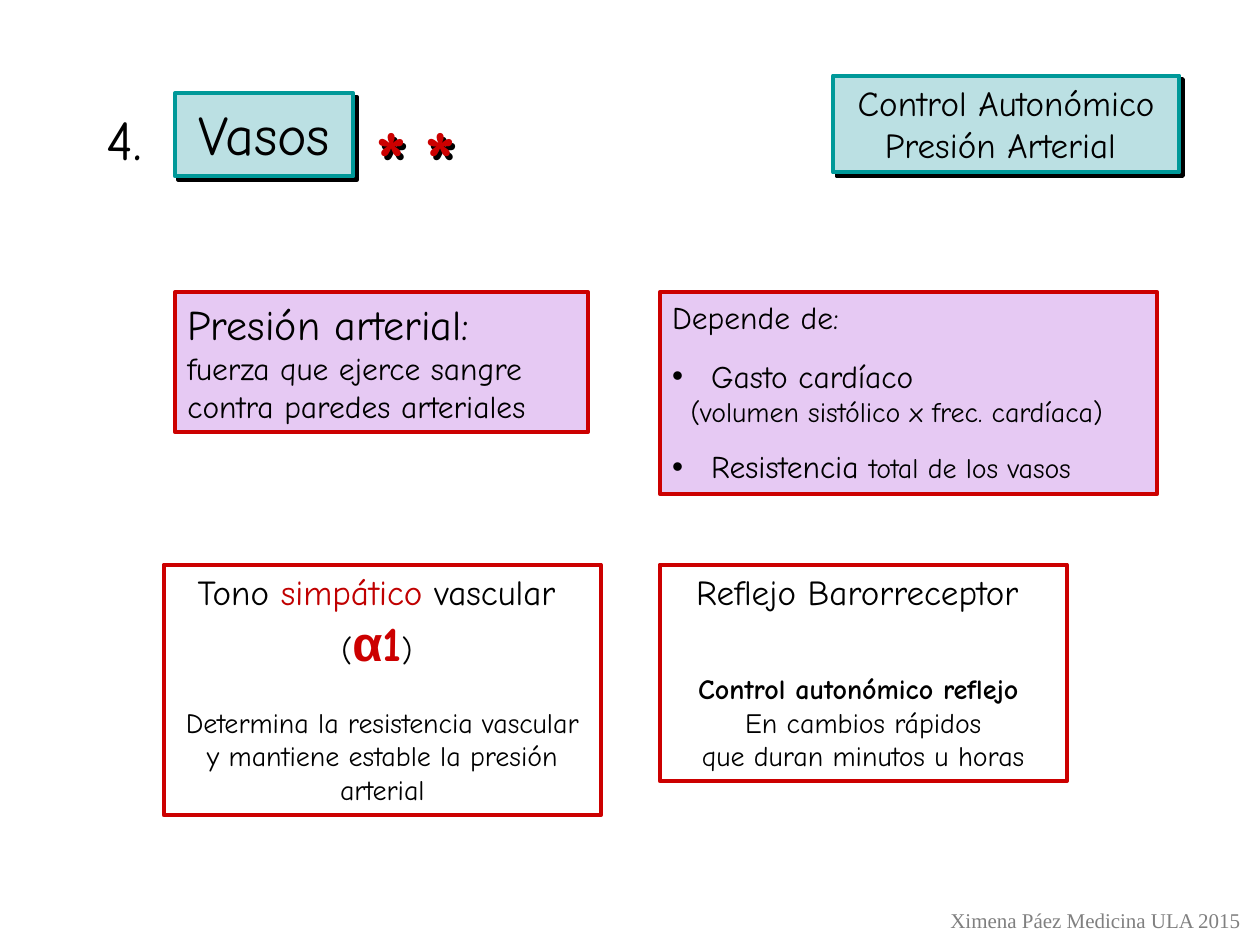
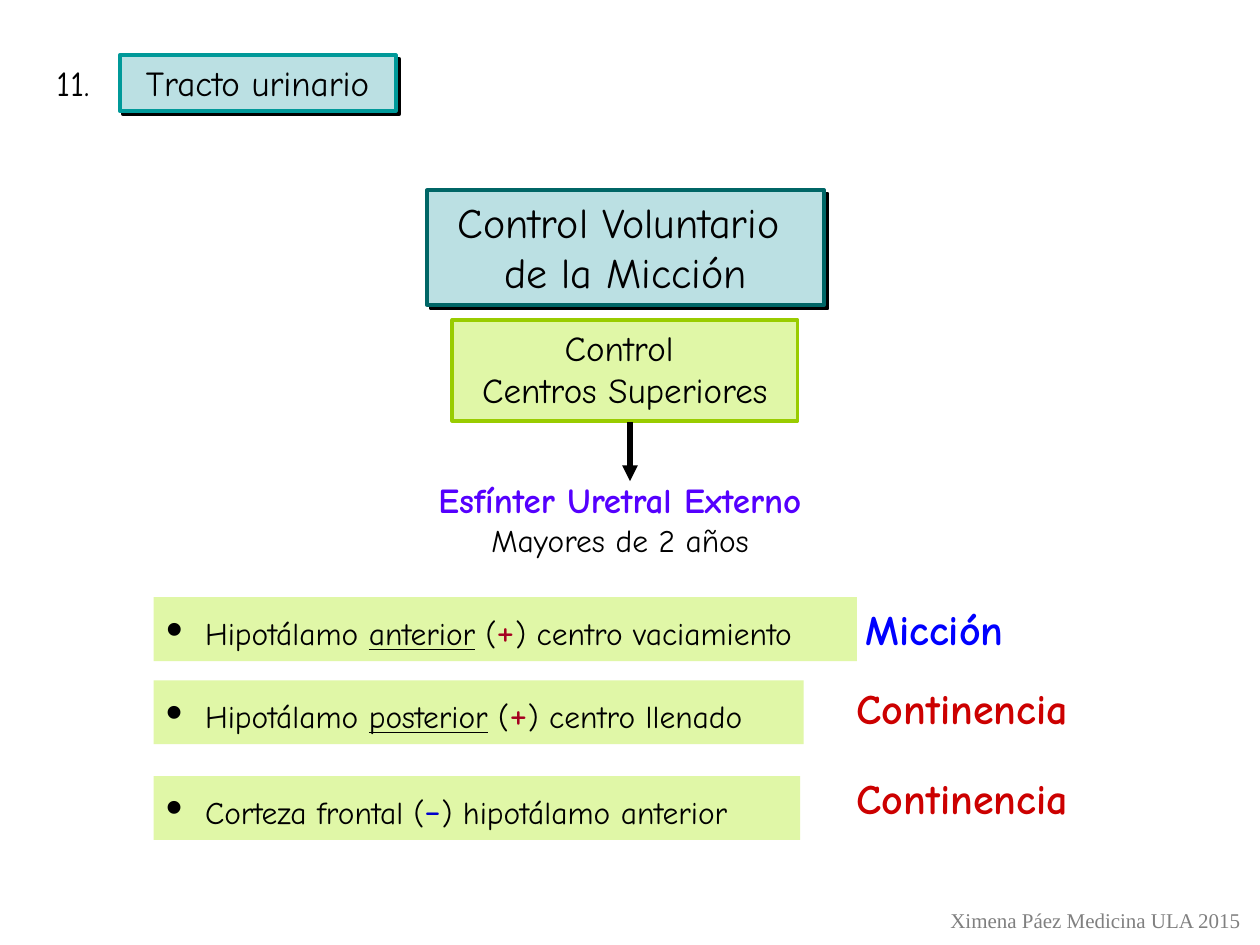
from dataclasses import dataclass
from typing import Optional

import pptx
import pptx.dml.color
import pptx.enum.shapes
import pptx.enum.text
import pptx.oxml
import pptx.oxml.ns
import pptx.util

Pt = pptx.util.Pt
ALIGN = pptx.enum.text.PP_ALIGN


@dataclass(frozen=True)
class Theme:
    font: str = "Comic Neue"
    footer_font: str = "Times New Roman"
    symbol_font: str = "Arial"
    black: str = "000000"
    grey: str = "808080"
    red: str = "CC0000"
    dark_red: str = "C00000"
    plus_red: str = "A50021"
    blue: str = "0000FF"
    minus_blue: str = "0000CC"
    violet: str = "5500FE"
    teal: str = "009999"
    dark_teal: str = "006666"
    pale_teal: str = "BBE0E3"
    lilac: str = "E6C9F3"
    lime: str = "99CC00"
    pale_lime: str = "E0F7A7"
    star: float = 48
    title: float = 32
    symbol: float = 28
    large: float = 24
    heading: float = 20
    body: float = 18
    small: float = 16
    footer: float = 12
    outline: float = 2.25
    bullet_indent: float = 22.3


THEME = Theme()


@dataclass
class Run:
    text: str
    size: float = THEME.body
    colour: str = THEME.black
    bold: bool = False
    underline: bool = False
    font: str = THEME.font


@dataclass
class Line:
    """One paragraph; bullet is the bullet size in percent."""
    runs: list
    centred: bool = False
    before: float = 0
    margin: float = 0
    bullet: Optional[int] = None


def centred(*runs, before=0):
    return Line(list(runs), centred=True, before=before)


def left(*runs, **options):
    return Line(list(runs), **options)


def rgb(colour):
    return pptx.dml.color.RGBColor.from_string(colour)


def add_xml(parent, tag, **attributes):
    element = pptx.oxml.parse_xml(f'<{tag} {pptx.oxml.ns.nsdecls("a")}/>')
    for name, value in attributes.items():
        element.set(name, str(value))
    parent.append(element)
    return element


class Deck:
    def __init__(self, theme):
        self.theme = theme
        self.presentation = pptx.Presentation()
        self.presentation.slide_width = Pt(720)
        self.presentation.slide_height = Pt(540)
        self.slide = None

    def new_slide(self):
        self.slide = self.presentation.slides.add_slide(self.presentation.slide_layouts[6])
        footer = Run("Ximena Páez Medicina ULA 2015", self.theme.footer,
                     self.theme.grey, font=self.theme.footer_font)
        self.text((535, 514.8, 182, 21.6), [centred(footer)])

    def panel(self, box, lines, fill=None, outline=None, shadow=False, wrap=False):
        shape = self.slide.shapes.add_shape(
            pptx.enum.shapes.MSO_SHAPE.RECTANGLE, *map(Pt, box))
        shape.shadow.inherit = False
        if fill:
            shape.fill.solid()
            shape.fill.fore_color.rgb = rgb(fill)
        else:
            shape.fill.background()
        if outline:
            shape.line.color.rgb = rgb(outline)
            shape.line.width = Pt(self.theme.outline)
        else:
            shape.line.fill.background()
        if shadow:
            self.drop_shadow(shape)
        self.add_lines(shape, lines, wrap)

    def title_panel(self, box, lines, outline=None):
        self.panel(box, lines, self.theme.pale_teal, outline or self.theme.teal, shadow=True)

    def text(self, box, lines, wrap=False, shadow=False):
        shape = self.slide.shapes.add_textbox(*map(Pt, box))
        if shadow:
            shape.shadow.inherit = False
            self.drop_shadow(shape)
        self.add_lines(shape, lines, wrap)

    def drop_shadow(self, shape):
        effects = shape._element.spPr.find(pptx.oxml.ns.qn("a:effectLst"))
        outer = add_xml(effects, "a:outerShdw", dist=Pt(2.8), dir=45 * 60000,
                        algn="ctr", rotWithShape=0)
        add_xml(outer, "a:srgbClr", val=self.theme.black)

    def add_lines(self, shape, lines, wrap):
        frame = shape.text_frame
        frame.word_wrap = wrap
        frame.auto_size = pptx.enum.text.MSO_AUTO_SIZE.SHAPE_TO_FIT_TEXT
        frame.vertical_anchor = pptx.enum.text.MSO_ANCHOR.TOP
        for index, line in enumerate(lines):
            paragraph = frame.add_paragraph() if index else frame.paragraphs[0]
            paragraph.alignment = ALIGN.CENTER if line.centred else ALIGN.LEFT
            if line.before:
                paragraph.space_before = Pt(line.before)
            self.indent(paragraph, line)
            for item in line.runs:
                run = paragraph.add_run()
                run.text = item.text
                run.font.name = item.font
                run.font.size = Pt(item.size)
                run.font.bold = item.bold
                run.font.underline = item.underline
                run.font.color.rgb = rgb(item.colour)

    def indent(self, paragraph, line):
        properties = paragraph._p.get_or_add_pPr()
        if line.bullet:
            indent = Pt(self.theme.bullet_indent)
            properties.set("marL", str(indent))
            properties.set("indent", str(-indent))
            add_xml(properties, "a:buSzPct", val=line.bullet * 1000)
            add_xml(properties, "a:buFont", typeface=self.theme.symbol_font)
            add_xml(properties, "a:buChar", char="•")
        elif line.margin:
            properties.set("marL", str(Pt(line.margin)))

    def arrow(self, start, end):
        connector = self.slide.shapes.add_connector(
            pptx.enum.shapes.MSO_CONNECTOR.STRAIGHT, *map(Pt, start + end))
        connector.line.color.rgb = rgb(self.theme.black)
        connector.line.width = Pt(3)
        properties = connector._element.spPr
        add_xml(properties.find(pptx.oxml.ns.qn("a:ln")), "a:tailEnd", type="triangle")
        add_xml(properties, "a:effectLst")


def build_vessels(deck):
    theme = deck.theme
    small, heading = theme.small, theme.heading
    left_edge, right_edge, definitions_top, controls_top = 100, 377, 167, 322.6
    deck.new_slide()
    deck.title_panel((left_edge, 53.3, 102, 47.5), [centred(Run("Vasos", theme.title))])
    deck.text((54, 56.2, 52, 45), [left(Run("4.", theme.title))])
    deck.title_panel((476, 43.2, 198, 55.4), [
        centred(Run("Control Autonómico", heading)),
        centred(Run("Presión Arterial ", heading))])
    for star_left in (235.4, 207.4):
        deck.text((star_left, 57.6, 39.6, 64.8),
                  [left(Run("*", theme.star, theme.red, bold=True))], shadow=True)

    deck.panel((left_edge, definitions_top, 236, 80), [
        left(Run("Presión arterial:", theme.large)),
        left(Run("fuerza que ejerce sangre")),
        left(Run("contra paredes arteriales"))],
        theme.lilac, theme.red, wrap=True)
    deck.panel((right_edge, definitions_top, 284.4, 115.2), [
        left(Run("Depende de:")),
        left(Run("Gasto cardíaco"), before=12, bullet=100),
        left(Run("(volumen sistólico x frec. cardíaca)", small), margin=10.5),
        left(Run("Resistencia "), Run("total de los vasos", small), before=10.8, bullet=100)],
        theme.lilac, theme.red, wrap=True)
    deck.panel((93.6, controls_top, 249.8, 143.3), [
        centred(Run("Tono ", heading), Run("simpático ", heading, theme.dark_red),
                Run("vascular ", heading)),
        centred(Run("("),
                Run("α", theme.symbol, theme.red, bold=True, font=theme.symbol_font),
                Run("1", theme.symbol, theme.red, bold=True), Run(") ")),
        centred(Run("Determina la resistencia vascular y mantiene estable la presión arterial",
                    small), before=19.2)],
        outline=theme.red, wrap=True)
    deck.panel((right_edge, controls_top, 232.6, 123.8), [
        centred(Run("Reflejo Barorreceptor ", heading)),
        centred(Run("Control autonómico reflejo ", small, bold=True), before=33.6),
        centred(Run("En cambios rápidos", small)),
        centred(Run("que duran minutos u horas", small))],
        outline=theme.red)


def build_urinary_tract(deck):
    theme = deck.theme
    heading, large = theme.heading, theme.large
    deck.new_slide()
    deck.title_panel((68.4, 31.7, 157.7, 31.7), [centred(Run("Tracto urinario", heading))])
    deck.text((25.2, 31.7, 55.4, 31.7), [left(Run("11.", heading))], wrap=True)
    deck.title_panel((244.1, 108.7, 226.8, 65.5), [
        centred(Run("Control Voluntario ", large)),
        centred(Run("de la Micción", large))], theme.dark_teal)
    deck.panel((258.5, 182.9, 197.3, 57.6), [
        centred(Run("Control ", heading)),
        centred(Run("Centros Superiores", heading))], theme.pale_lime, theme.lime)
    deck.arrow((360, 241.2), (360, 275))
    deck.text((218.2, 270, 272.2, 52.6), [
        centred(Run("Esfínter Uretral Externo", heading, theme.violet, bold=True)),
        centred(Run("Mayores de 2 años"))], wrap=True)

    plus = Run("+", large, theme.plus_red)
    minus = Run("-", large, theme.minus_blue)
    centres = [
        (341.3, 401.8, [Run("Hipotálamo "), Run("anterior", underline=True), Run(" ("),
                        plus, Run(") centro vaciamiento")]),
        (388.8, 371.5, [Run("Hipotálamo "), Run("posterior", underline=True), Run(" ("),
                        plus, Run(") centro llenado")]),
        (443.5, 369.4, [Run("Corteza frontal ("), minus, Run(") hipotálamo anterior")]),
    ]
    for top, width, runs in centres:
        deck.panel((87.8, top, width, 36.5), [left(*runs, bullet=150)], theme.pale_lime)

    effects = [
        ("Micción", theme.blue, 487.4, 341.3, 99.4),
        ("Continencia", theme.red, 482.4, 386.6, 144),
        ("Continencia", theme.red, 482.4, 437.8, 144),
    ]
    for effect, colour, label_left, top, width in effects:
        deck.text((label_left, top, width, 36), [left(Run(effect, large, colour, bold=True))])


def main():
    deck = Deck(THEME)
    build_vessels(deck)
    build_urinary_tract(deck)
    deck.presentation.save("out.pptx")


if __name__ == "__main__":
    main()
